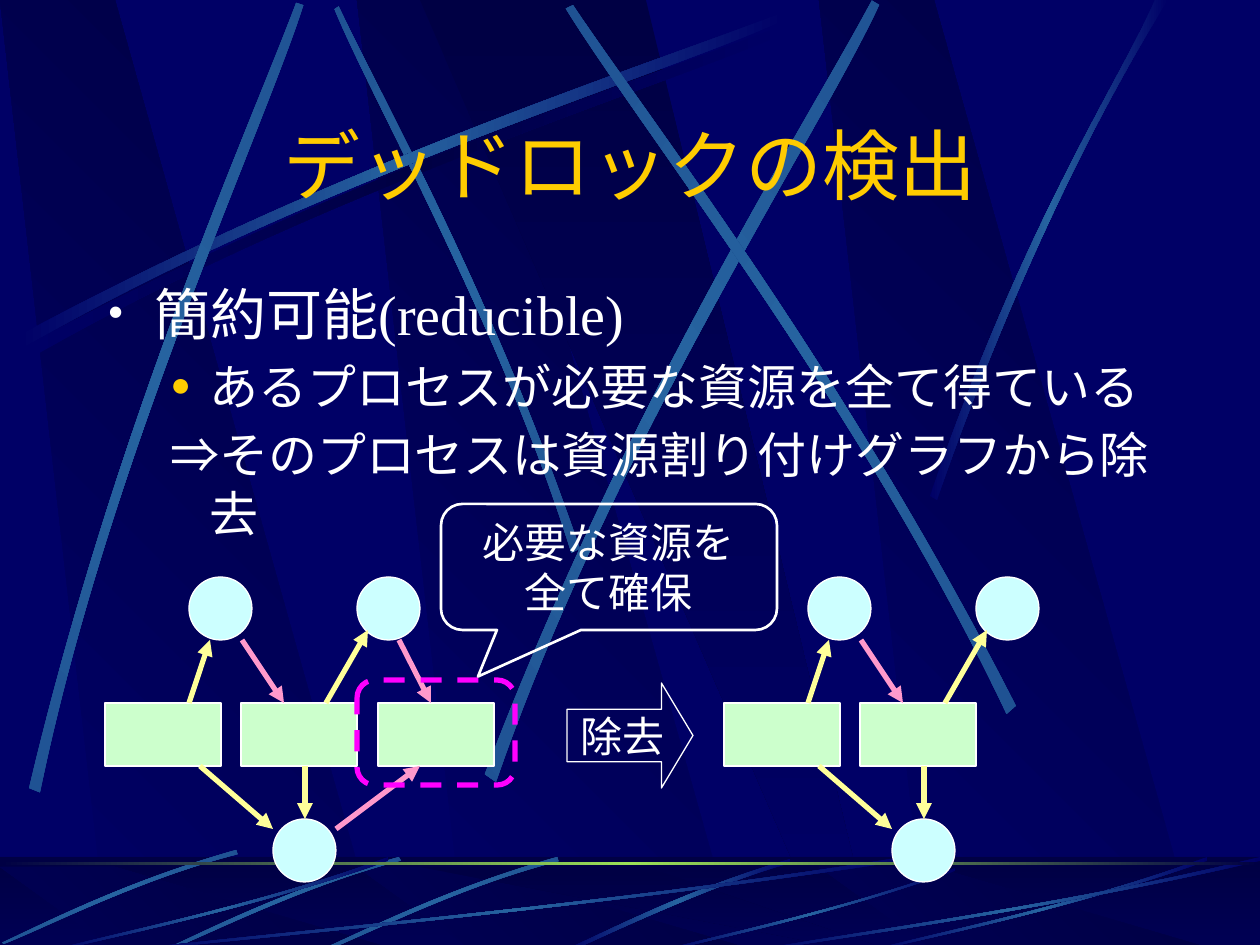
from math import cos, radians, sin

from lxml.etree import SubElement
from pptx import Presentation
from pptx.dml.color import RGBColor
from pptx.enum.dml import MSO_LINE
from pptx.enum.shapes import MSO_CONNECTOR, MSO_SHAPE as SHAPE
from pptx.enum.text import MSO_ANCHOR as ANCHOR, PP_ALIGN as ALIGN
from pptx.oxml import parse_xml
from pptx.oxml.ns import nsdecls, qn
from pptx.util import Pt

PX = 914400 / 126
WIDTH, HEIGHT = 1260, 945
COLORS = dict(navy="000066", dark="000044", ray="2663A0", ray_end="1D4C8E", horizon="9CE157",
              gold="FFCC00", white="FFFFFF", process="CCFFCC", resource="CCFFFF",
              held="FFFF99", wanted="FF99CC", removed="FF00FF")

BEAM_OFFSETS = (357, 0, 819)
BEAM = ((108, 1), (380, 1), (115, 0), (0, 0))
WEDGE = ((420, 0), (829, 1), (874, 1), (646, 0))
RAYS = [
    ("dark", 0, [(25, 346), (358, 169), (660, 74), (789, 23),
                 (793, 30), (665, 87), (320, 190), (29, 359)]),
    ("ray", 45, [(580, 549), (493, 295), (381, 97), (339, 6),
                 (334, 9), (372, 100), (501, 325), (572, 553)]),
    ("ray", 0, [(18, 336), (350, 158), (653, 64), (781, 13),
                (785, 20), (658, 77), (312, 180), (21, 349)]),
    ("ray", 311.7, [(29, 788), (117, 421), (248, 132), (296, 3),
                    (304, 5), (261, 137), (108, 464), (40, 793)]),
    ("ray", 321.6, [(485, 774), (627, 403), (804, 129), (872, 1),
                    (879, 5), (818, 136), (612, 447), (496, 782)]),
    ("ray", 34.7, [(1016, 706), (844, 369), (650, 120), (573, 5),
                   (566, 9), (639, 127), (863, 410), (1007, 714)]),
    ("ray", 0, [(930, 496), (1026, 218), (1119, 83), (1155, 0),
                (1168, 0), (1053, 183), (969, 406), (937, 500)]),
]
FLOOR_RAY = [(790, 859), (677, 893), (601, 935), (564, 950),
             (571, 951), (617, 930), (719, 882), (791, 863)]
ARC = [(557, 857), (447, 888), (362, 932), (323, 949),
       (324, 951), (363, 936), (460, 886), (559, 861)]
ARC_OFFSETS = ((0, 0), (-158, 0), (-321, -7))
SWEEP = [(1, 0.04), (0.57, 0.57), (0.17, 0.85), (0.01, 1),
         (0, 0.99), (0.17, 0.82), (0.62, 0.51), (1, 0)]
SWEEPS = ((126, 857, 777), (53, 857, 335), (664, 868, 291), (872, 857, 335), (756, 857, 504))

BODY = [
    dict(runs=[("簡約可能", "Arial"), ("(reducible)", "Times New Roman")],
         size=32, margin=47, indent=-47, bullet="•", bullet_size=85, bullet_color="white"),
    dict(runs=[("あるプロセスが必要な資源を全て得ている", "Arial")], size=28, level=1,
         margin=102, indent=-39, bullet="●", bullet_size=70, bullet_color="gold", before=5.6),
    dict(runs=[("⇒そのプロセスは資源割り付けグラフから除去", "Arial")], size=28, level=1,
         margin=102, indent=-39, before=5.6),
]
PROCESSES = [(105, 703), (241, 703), (378, 703)]
RESOURCES = [(189, 577), (357, 577), (273, 819)]
EDGES = [
    ("held", (189, 703), (210, 640)), ("wanted", (242, 640), (284, 703)),
    ("held", (326, 703), (368, 630)), ("held", (200, 766), (273, 829)),
    ("held", (305, 766), (305, 819)), ("wanted", (399, 640), (431, 703)),
    ("wanted", (336, 829), (420, 766)),
]
GRAPHS = [(0, 3, 7), (619, 2, 5)]


def px(*values):
    return [round(value * PX) for value in values]


def rgb(name):
    return RGBColor.from_string(COLORS[name])


def paint_gradient(shape, names, angle):
    last = len(names) - 1
    stops = "".join(f'<a:gs pos="{100000 * i // last}"><a:srgbClr val="{COLORS[name]}"/></a:gs>'
                    for i, name in enumerate(names))
    fill = parse_xml(f'<a:gradFill {nsdecls("a")} rotWithShape="1"><a:gsLst>{stops}</a:gsLst>'
                     f'<a:lin ang="{angle * 60000}" scaled="0"/></a:gradFill>')
    properties = shape.fill._xPr
    properties.find(qn("a:ln")).addprevious(fill)


def add_box(kind, left, top, width, height, fill=None, line=None, weight=0.75, adjust=()):
    shape = slide.shapes.add_shape(kind, *px(left, top, width, height))
    shape.shadow.inherit = False
    for i, value in enumerate(adjust):
        shape.adjustments[i] = value
    if line:
        shape.line.color.rgb = rgb(line)
        shape.line.width = Pt(weight)
    else:
        shape.line.fill.background()
    if fill:
        shape.fill.solid()
        shape.fill.fore_color.rgb = rgb(fill)
    else:
        shape.fill.background()
    return shape


def add_band(left, top, width, height, names, angle):
    shape = add_box(SHAPE.RECTANGLE, left, top, width, height)
    no_fill = shape.fill._xPr.find(qn("a:noFill"))
    no_fill.getparent().remove(no_fill)
    paint_gradient(shape, names, angle)


def add_outline(points, names, angle):
    builder = slide.shapes.build_freeform(*points[0], scale=PX)
    builder.add_line_segments(points[1:], close=True)
    shape = builder.convert_to_shape()
    shape.shadow.inherit = False
    shape.line.fill.background()
    paint_gradient(shape, names, angle)
    return shape


def turn(x, y, angle):
    c, s = cos(radians(angle)), sin(radians(angle))
    return x * c - y * s, x * s + y * c


def add_ray(controls, middle="ray", rotation=0):
    end = "ray_end" if rotation else "navy"
    shape = add_outline([turn(x, y, -rotation) for x, y in controls], (end, middle, end), 0)
    center = turn(shape.left + shape.width / 2, shape.top + shape.height / 2, rotation)
    shape.left = round(center[0] - shape.width / 2)
    shape.top = round(center[1] - shape.height / 2)
    shape.rotation = rotation
    segments = list(shape._element.iter(qn("a:lnTo")))
    for triple in (segments[:3], segments[4:7]):
        curve = parse_xml(f'<a:cubicBezTo {nsdecls("a")}/>')
        triple[0].addprevious(curve)
        for segment in triple:
            curve.append(segment[0])
            segment.getparent().remove(segment)


def add_beams(top):
    def place(corners, shift):
        return [(x + shift, top + y * (HEIGHT - top)) for x, y in corners]
    for offset in BEAM_OFFSETS:
        add_outline(place(BEAM, offset), ("navy", "dark"), 315)
    add_outline(place(WEDGE, 0), ("dark", "navy"), 90)


def add_text(shape, paragraphs, size=24, color="white", align=ALIGN.CENTER,
             anchor=ANCHOR.MIDDLE, wrap=True):
    frame = shape.text_frame
    frame.word_wrap = wrap
    frame.vertical_anchor = anchor
    for i, item in enumerate(paragraphs):
        paragraph = frame.paragraphs[0] if i == 0 else frame.add_paragraph()
        paragraph.alignment = align
        paragraph.level = item.get("level", 0)
        properties = paragraph._p.get_or_add_pPr()
        for key, name in (("margin", "marL"), ("indent", "indent")):
            if key in item:
                properties.set(name, str(px(item[key])[0]))
        if "bullet" in item:
            bullet_color = SubElement(properties, qn("a:buClr"))
            SubElement(bullet_color, qn("a:srgbClr"), val=COLORS[item["bullet_color"]])
            SubElement(properties, qn("a:buSzPct"), val=str(item["bullet_size"] * 1000))
            SubElement(properties, qn("a:buFont"), typeface="Times New Roman")
            SubElement(properties, qn("a:buChar"), char=item["bullet"])
        if "before" in item:
            paragraph.space_before = Pt(item["before"])
        for text, font in item["runs"]:
            run = paragraph.add_run()
            run.text = text
            run.font.name = font
            run.font.size = Pt(item.get("size", size))
            run.font.color.rgb = rgb(color)


def add_arrow(color, start, end):
    arrow = slide.shapes.add_connector(MSO_CONNECTOR.STRAIGHT, *px(*start, *end))
    arrow.line.color.rgb = rgb(color)
    arrow.line.width = Pt(3)
    SubElement(arrow.line._get_or_add_ln(), qn("a:tailEnd"), type="triangle")
    SubElement(arrow._element.spPr, qn("a:effectLst"))


presentation = Presentation()
presentation.slide_width, presentation.slide_height = px(WIDTH, HEIGHT)
slide = presentation.slides.add_slide(presentation.slide_layouts[6])
slide.background.fill.solid()
slide.background.fill.fore_color.rgb = rgb("navy")

add_beams(0)
for middle, rotation, controls in RAYS:
    add_ray(controls, middle, rotation)
add_band(0, 857, WIDTH, 88, ("dark", "navy"), 90)
add_beams(867)
veil = add_box(SHAPE.RECTANGLE, 0, 857, WIDTH, 88, fill="dark")
SubElement(veil.fill._xPr.find(qn("a:solidFill"))[0], qn("a:alpha"), val="50000")
add_ray(FLOOR_RAY)
for dx, dy in ARC_OFFSETS:
    add_ray([(x + dx, y + dy) for x, y in ARC], rotation=315)
for left, top, width in SWEEPS:
    add_ray([(left + x * width, top + y * (951 - top)) for x, y in SWEEP])
add_band(0, 862, WIDTH, 3, ("dark", "horizon", "dark"), 0)

title = slide.shapes.add_textbox(*px(95, 111, 1071, 105))
add_text(title, [dict(runs=[("デッドロックの検出", "Montserrat")])], size=44, color="gold")
body = slide.shapes.add_textbox(*px(95, 273, 1071, 252))
add_text(body, BODY, align=ALIGN.LEFT, anchor=ANCHOR.TOP)

for offset, process_count, edge_count in GRAPHS:
    for x, y in PROCESSES[:process_count]:
        add_box(SHAPE.RECTANGLE, x + offset, y, 116, 63, "process", "white")
    for x, y in RESOURCES:
        add_box(SHAPE.OVAL, x + offset, y, 63, 63, "resource", "white")
    for color, (x1, y1), (x2, y2) in EDGES[:edge_count]:
        add_arrow(color, (x1 + offset, y1), (x2 + offset, y2))

marker = add_box(SHAPE.ROUNDED_RECTANGLE, 357, 680, 158, 105, line="removed", weight=3, adjust=(0.17,))
marker.line.dash_style = MSO_LINE.DASH
removal = add_box(SHAPE.RIGHT_ARROW, 567, 683, 126, 105, line="white", adjust=(0.5, 0.3))
add_text(removal, [dict(runs=[("除去", "Times New Roman")])], wrap=False)
callout = add_box(SHAPE.ROUNDED_RECTANGULAR_CALLOUT, 441, 504, 336, 126, line="white",
                  weight=1.5, adjust=(-0.39, 0.87, 0.17))
add_text(callout, [dict(runs=[(line, "Times New Roman")]) for line in ("必要な資源を", "全て確保")],
         anchor=ANCHOR.TOP)

presentation.save("out.pptx")
